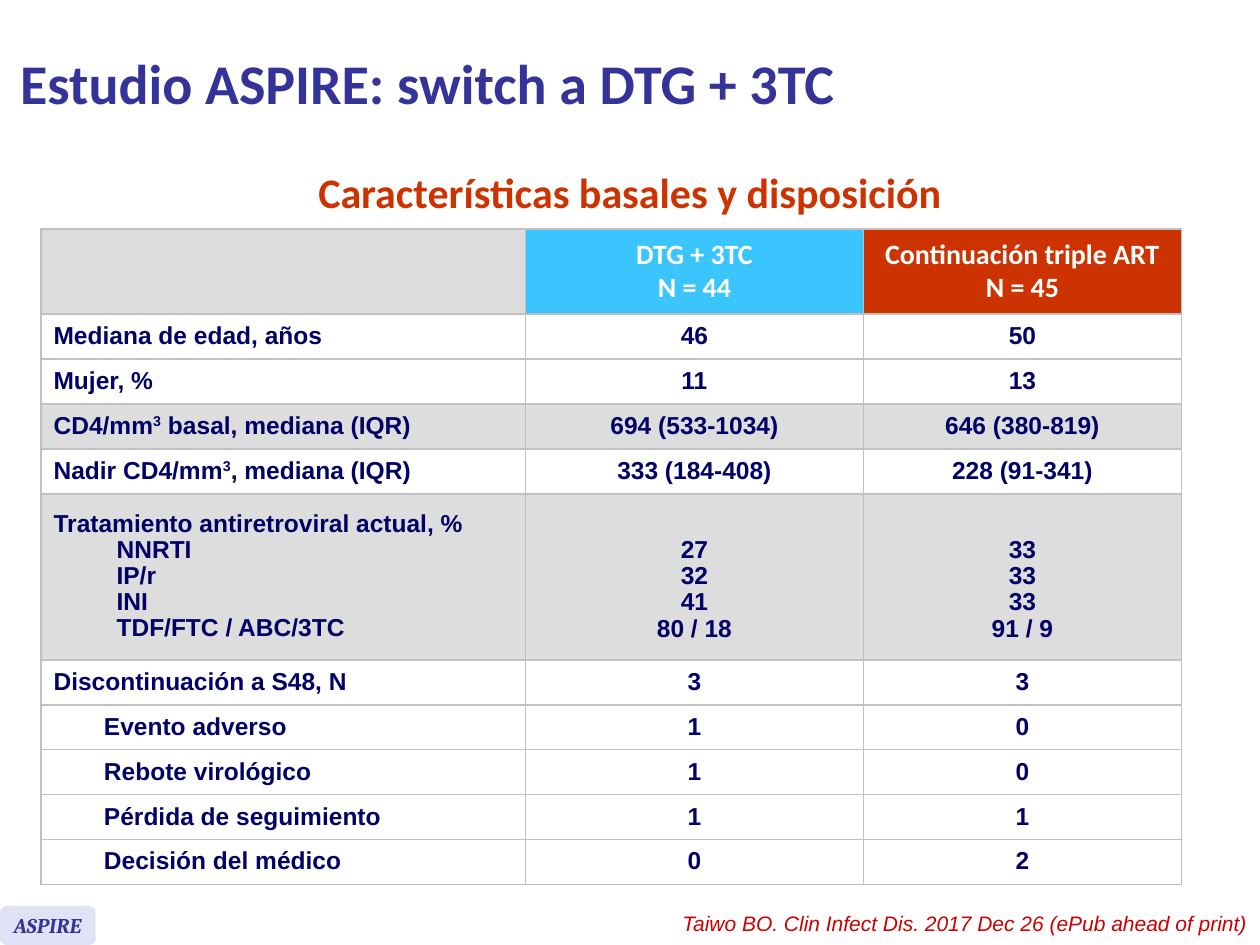
from dataclasses import dataclass

from lxml.etree import SubElement
from pptx import Presentation
from pptx.dml.color import RGBColor
from pptx.enum.shapes import MSO_SHAPE
from pptx.enum.text import MSO_ANCHOR, MSO_AUTO_SIZE, PP_ALIGN
from pptx.oxml.ns import qn
from pptx.util import Inches, Pt

SLIDE_W, SLIDE_H = Inches(10), Inches(7.5)
COLORS = {
    "indigo": "333399", "navy": "000066", "red": "CC3300", "cite": "CC0000",
    "sky": "3AC5FF", "lilac": "E2E2F6", "gray": "DDDDDD", "border": "C0C0C0",
    "white": "FFFFFF",
}


@dataclass
class Style:
    font: str
    size: float
    color: str
    bold: bool = True
    italic: bool = False


@dataclass
class Row:
    label: list[str]  # the lines after the first are indented; ^ wraps superscripts
    dual: list[str]
    triple: list[str]
    fill: str = "white"
    sub: bool = False
    height: float = 4.76


HEAD = Style("Calibri", 16, "white")
BODY = Style("Arial", 14, "navy")
COLUMNS = [4, 34.45, 26.83, 25.24]  # % of slide width
HEADER_HEIGHT = 9  # % of slide height
LINE_SPACING = 0.95

ROWS = [
    Row(["Mediana de edad, años"], ["46"], ["50"]),
    Row(["Mujer, %"], ["11"], ["13"]),
    Row(["CD4/mm^3^ basal, mediana (IQR)"], ["694 (533-1034)"],
        ["646 (380-819)"], "gray"),
    Row(["Nadir CD4/mm^3^, mediana (IQR)"], ["333 (184-408)"], ["228 (91-341)"]),
    Row(["Tratamiento antiretroviral actual, %", "NNRTI", "IP/r", "INI",
         "TDF/FTC / ABC/3TC"],
        ["27", "32", "41", "80 / 18"], ["33", "33", "33", "91 / 9"],
        "gray", height=17.57),
    Row(["Discontinuación a S48, N"], ["3"], ["3"]),
    Row(["Evento adverso"], ["1"], ["0"], sub=True),
    Row(["Rebote virológico"], ["1"], ["0"], sub=True),
    Row(["Pérdida de seguimiento"], ["1"], ["1"], sub=True),
    Row(["Decisión del médico"], ["0"], ["2"], sub=True),
]


def rgb(name: str) -> RGBColor:
    return RGBColor.from_string(COLORS[name])


def across(pct: float) -> int:
    return round(SLIDE_W * pct / 100)


def down(pct: float) -> int:
    return round(SLIDE_H * pct / 100)


def box(x: float, y: float, w: float, h: float) -> tuple[int, int, int, int]:
    return across(x), down(y), across(w), down(h)


def write(p, text: str, style: Style, align=PP_ALIGN.LEFT, spacing=None) -> None:
    p.alignment = align
    if spacing:
        p.line_spacing = spacing
    for i, part in enumerate(text.split("^")):
        r = p.add_run()
        r.text = part
        f = r.font
        f.name, f.size = style.font, Pt(style.size)
        f.bold, f.italic = style.bold, style.italic
        f.color.rgb = rgb(style.color)
        if i % 2:
            r._r.get_or_add_rPr().set("baseline", "30000")


def paint_cell(cell, fill: str, sides: str = "LRTB") -> None:
    tc_pr = cell._tc.get_or_add_tcPr()
    for side in "LRTB":
        ln = SubElement(tc_pr, qn(f"a:ln{side}"), w=str(Pt(1)))
        if side in sides:
            paint = SubElement(ln, qn("a:solidFill"))
            SubElement(paint, qn("a:srgbClr"), val=COLORS["border"])
        else:
            SubElement(ln, qn("a:noFill"))
    cell.fill.solid()
    cell.fill.fore_color.rgb = rgb(fill)
    cell.vertical_anchor = MSO_ANCHOR.MIDDLE


def fill_cell(cell, lines: list[str], style: Style, align=PP_ALIGN.CENTER,
              indent: float = 0) -> None:
    tf = cell.text_frame
    for i, line in enumerate(lines):
        p = tf.add_paragraph() if i else tf.paragraphs[0]
        if i and indent:
            p._p.get_or_add_pPr().set("marL", str(Inches(indent)))
        write(p, line, style, align, LINE_SPACING)


def flatten(cell) -> None:
    """Keep an empty cell from stretching its row."""
    cell.margin_top = cell.margin_bottom = 0


def add_baseline_table(slide) -> None:
    heights = [HEADER_HEIGHT] + [row.height for row in ROWS]
    frame = slide.shapes.add_table(len(heights), len(COLUMNS),
                                   *box(3.25, 24.23, sum(COLUMNS), sum(heights)))
    table = frame.table
    table.first_row = table.horz_banding = False
    for col, width in zip(table.columns, COLUMNS):
        col.width = across(width)
    for line, height in zip(table.rows, heights):
        line.height = down(height)

    # Header
    for c, fill in enumerate(["gray", "gray", "sky", "red"]):
        paint_cell(table.cell(0, c), fill)
    table.cell(0, 0).merge(table.cell(0, 1))
    fill_cell(table.cell(0, 2), ["DTG + 3TC", "N = 44"], HEAD)
    fill_cell(table.cell(0, 3), ["Continuación triple ART", "N = 45"], HEAD)

    # Body
    for n, row in enumerate(ROWS, start=1):
        cells = [table.cell(n, c) for c in range(len(COLUMNS))]
        for cell, sides in zip(cells, ["LTB", "RTB", "LRTB", "LRTB"]):
            paint_cell(cell, row.fill, sides if row.sub else "LRTB")
        if row.sub:
            flatten(cells[0])
        else:
            flatten(cells[1])
            cells[0].merge(cells[1])
        fill_cell(cells[1 if row.sub else 0], row.label, BODY, PP_ALIGN.LEFT, 0.5)
        for cell, values in zip(cells[2:], [row.dual, row.triple]):
            fill_cell(cell, values, BODY)
            # Values line up with the indented lines under the heading
            missing = len(row.label) - len(values)
            cell.margin_top = Inches(0.05 + 0.21 * missing)


def add_text(slide, place, text: str, style: Style, align, anchor,
             wrap: bool = True, spacing=None) -> None:
    tf = slide.shapes.add_textbox(*place).text_frame
    tf.word_wrap, tf.vertical_anchor = wrap, anchor
    write(tf.paragraphs[0], text, style, align, spacing)


def add_title(slide) -> None:
    sp = slide.shapes.title
    sp.left, sp.top, sp.width, sp.height = box(0.6, 0.67, 89.6, 16.13)
    tf = sp.text_frame
    tf.auto_size, tf.vertical_anchor = MSO_AUTO_SIZE.NONE, MSO_ANCHOR.MIDDLE
    write(tf.paragraphs[0], "Estudio ASPIRE: switch a DTG + 3TC",
          Style("Calibri", 32, "indigo"))


def add_badge(slide) -> None:
    sp = slide.shapes.add_shape(MSO_SHAPE.ROUNDED_RECTANGLE,
                                *box(0, 95.87, 7.6, 4.13))
    sp.shadow.inherit = False
    sp.fill.solid()
    sp.fill.fore_color.rgb = rgb("lilac")
    sp.line.fill.background()
    tf = sp.text_frame
    tf.word_wrap, tf.vertical_anchor = False, MSO_ANCHOR.MIDDLE
    write(tf.paragraphs[0], "ASPIRE",
          Style("Cambria", 12, "indigo", italic=True), PP_ALIGN.CENTER)


def main() -> None:
    prs = Presentation()
    prs.slide_width, prs.slide_height = SLIDE_W, SLIDE_H
    slide = prs.slides.add_slide(prs.slide_layouts[5])
    add_title(slide)
    add_baseline_table(slide)
    # Table heading
    add_text(slide, box(23.9, 19.2, 52.2, 4.67),
             "Características basales y disposición", Style("Calibri", 24, "red"),
             PP_ALIGN.CENTER, MSO_ANCHOR.MIDDLE, wrap=False, spacing=Pt(15.2))
    add_badge(slide)
    # Citation
    add_text(slide, box(52.5, 95.73, 47.5, 4),
             "Taiwo BO. Clin Infect Dis. 2017 Dec 26 (ePub ahead of print)",
             Style("Arial", 12, "cite", bold=False, italic=True),
             PP_ALIGN.RIGHT, MSO_ANCHOR.TOP)
    prs.save("out.pptx")


if __name__ == "__main__":
    main()
